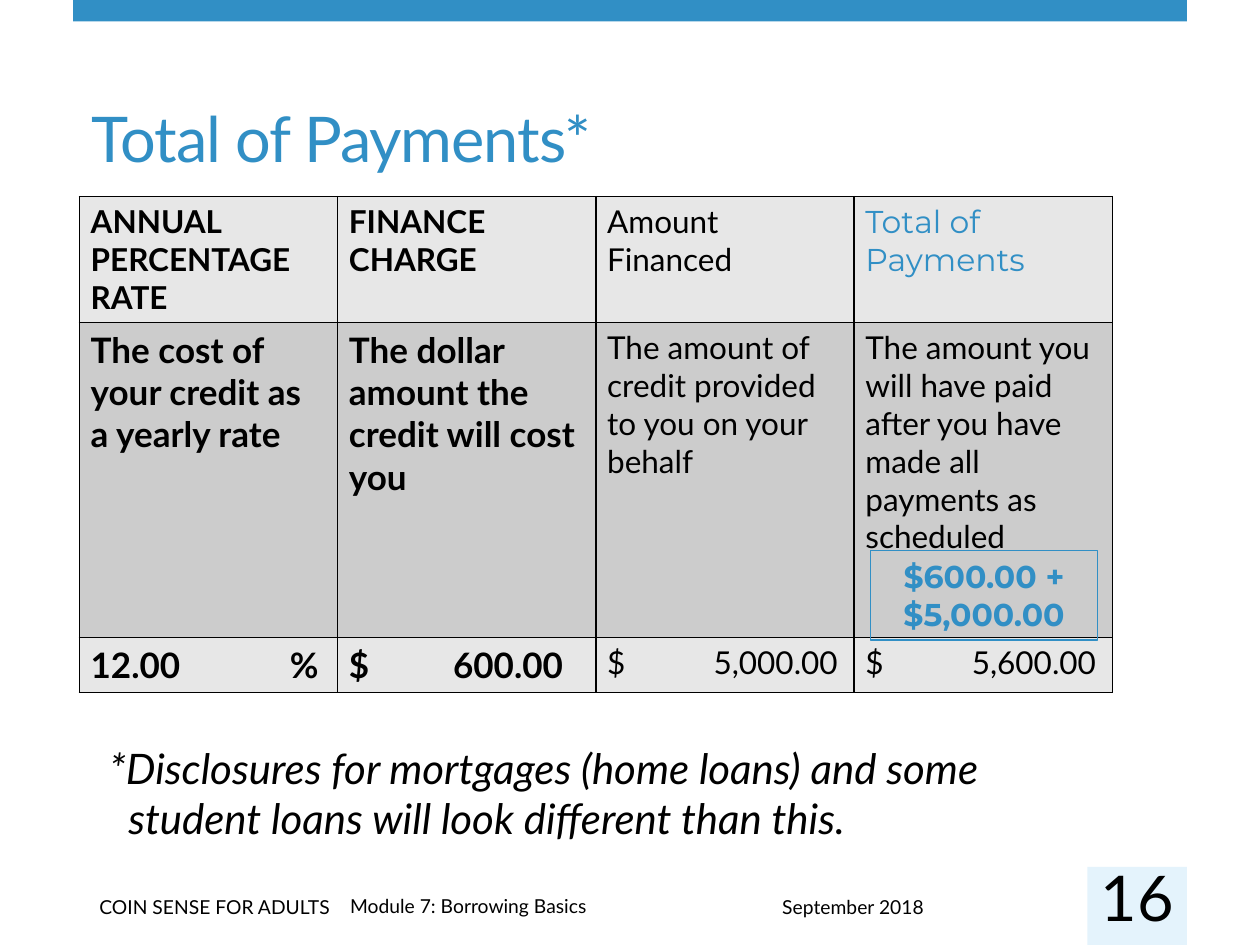
"""Build the Total of Payments slide."""
from lxml import etree
from pptx import Presentation
from pptx import util as u
from pptx.dml import color
from pptx.enum import shapes, text
from pptx.oxml import ns

BLUE, BLACK, PALE, GREY = "318FC5", "000000", "E7E7E7", "CCCCCC"
LATO, MONT = "Lato", "Montserrat"


def rgb(code):
    """Turn a hex string into a colour."""
    return color.RGBColor.from_string(code)


def sub(node, tag, **attrs):
    """Append a drawing element with attributes."""
    return etree.SubElement(node, ns.qn(tag), {k: str(v) for k, v in attrs.items()})


def box(at):
    """Turn left, top, width and height into lengths."""
    return [u.Inches(n) for n in at]


def write(frame, *lines, size=18, font=LATO, ink=BLACK, bold=False, slant=False,
          align=text.PP_ALIGN.LEFT, anchor=text.MSO_ANCHOR.TOP, track=0, hang=0, tab=0):
    """Fill a text frame with one formatted paragraph per line."""
    frame.word_wrap = True
    frame.vertical_anchor = anchor
    for i, line in enumerate(lines):
        par = frame.add_paragraph() if i else frame.paragraphs[0]
        par.text = line
        par.alignment = align
        props = par._p.get_or_add_pPr()
        if hang:
            props.set("marL", str(u.Inches(hang)))
            props.set("indent", str(u.Inches(-hang)))
        if tab:
            sub(sub(props, "a:tabLst"), "a:tab", pos=u.Inches(tab), algn="r")
        for run in par.runs:
            face = run.font
            face.name, face.size = font, u.Pt(size)
            face.bold, face.italic = bold, slant
            face.color.rgb = rgb(ink)
            if track:
                run._r.get_or_add_rPr().set("spc", str(track))


def label(slide, at, *lines, inset=None, **form):
    """Add a text box."""
    frame = slide.shapes.add_textbox(*box(at)).text_frame
    if inset is not None:
        frame.margin_left = frame.margin_right = u.Inches(inset)
        frame.margin_top = frame.margin_bottom = u.Inches(inset)
    write(frame, *lines, **form)


def rect(slide, at, fill=None, line=None):
    """Add a plain rectangle."""
    shape = slide.shapes.add_shape(shapes.MSO_SHAPE.RECTANGLE, *box(at))
    shape.shadow.inherit = False
    if fill:
        shape.fill.solid()
        shape.fill.fore_color.rgb = rgb(fill)
    else:
        shape.fill.background()
    if line:
        shape.line.color.rgb = rgb(line)
        shape.line.width = u.Pt(0.75)
    else:
        shape.line.fill.background()
    return shape


def edge(cell):
    """Draw thin black borders round a cell."""
    props = cell._tc.get_or_add_tcPr()
    for side in ("a:lnL", "a:lnR", "a:lnT", "a:lnB"):
        line = sub(props, side, w=u.Pt(1))
        sub(sub(line, "a:solidFill"), "a:srgbClr", val=BLACK)


def grid(slide, at, rows, highs, fills):
    """Add the table of disclosures from (lines, format) cells."""
    table = slide.shapes.add_table(len(rows), len(rows[0]), *box(at)).table
    for r, row in enumerate(rows):
        table.rows[r].height = u.Inches(highs[r])
        for c, (lines, form) in enumerate(row):
            cell = table.cell(r, c)
            cell.margin_left = cell.margin_right = u.Inches(0.09)
            edge(cell)
            cell.fill.solid()
            cell.fill.fore_color.rgb = rgb(fills[r])
            write(cell.text_frame, *lines, **form)


def main():
    """Build and save the slide."""
    deck = Presentation()
    deck.slide_width, deck.slide_height = u.Inches(10), u.Inches(7.5)
    slide = deck.slides.add_slide(deck.slide_layouts[5])

    rect(slide, (0.58, 0, 8.84, 0.17), BLUE)
    rect(slide, (8.63, 6.88, 0.79, 0.62), "E4F3FC")
    for at, line in (((2.68, 7.05, 5.66, 0.29), "Module 7: Borrowing Basics"),
                     ((0.69, 7.06, 2.09, 0.29), "COIN SENSE FOR ADULTS"),
                     ((6.11, 7.06, 2.52, 0.29), "September 2018")):
        label(slide, at, line, size=11)

    title = slide.shapes.title
    title.left, title.top, title.width, title.height = box((0.63, 0.48, 8.2, 0.96))
    write(title.text_frame, "Total of Payments*", size=36, ink=BLUE, track=-60,
          anchor=text.MSO_ANCHOR.BOTTOM)

    big = dict(size=20, bold=True)
    rows = [
        [(("ANNUAL", "PERCENTAGE RATE"), dict(bold=True)),
         (("FINANCE\vCHARGE",), dict(bold=True)),
         (("Amount\vFinanced",), {}),
         (("Total of\vPayments",), dict(font=MONT, ink=BLUE))],
        [(("The cost of your credit as a yearly rate",), big),
         (("The dollar amount the credit will cost you",), big),
         (("The amount of credit provided to you on your behalf",), {}),
         (("The amount you will have paid after you have made all "
           "payments as scheduled",), {})],
        [(("12.00\t%",), dict(big, tab=1.81)),
         (("$\t600.00",), dict(big, tab=1.7)),
         (("$\t5,000.00",), dict(tab=1.83)),
         (("$\t5,600.00",), dict(tab=1.83))],
    ]
    grid(slide, (0.63, 1.56, 8.2, 3.93), rows, (1, 2.5, 0.43), (PALE, GREY, PALE))

    total = rect(slide, (6.91, 4.37, 1.8, 0.71), line=BLUE)
    write(total.text_frame, "$600.00 +\v$5,000.00", font=MONT, ink=BLUE, bold=True,
          align=text.PP_ALIGN.CENTER)
    label(slide, (0.77, 5.84, 8.16, 0.91),
          "*Disclosures for mortgages (home loans) and some\v"
          "student loans will look different than this.",
          size=24, slant=True, hang=0.15)
    label(slide, (8.63, 6.96, 0.79, 0.31), "16", size=36, inset=0,
          align=text.PP_ALIGN.CENTER, anchor=text.MSO_ANCHOR.MIDDLE)
    deck.save("out.pptx")


if __name__ == "__main__":
    main()
